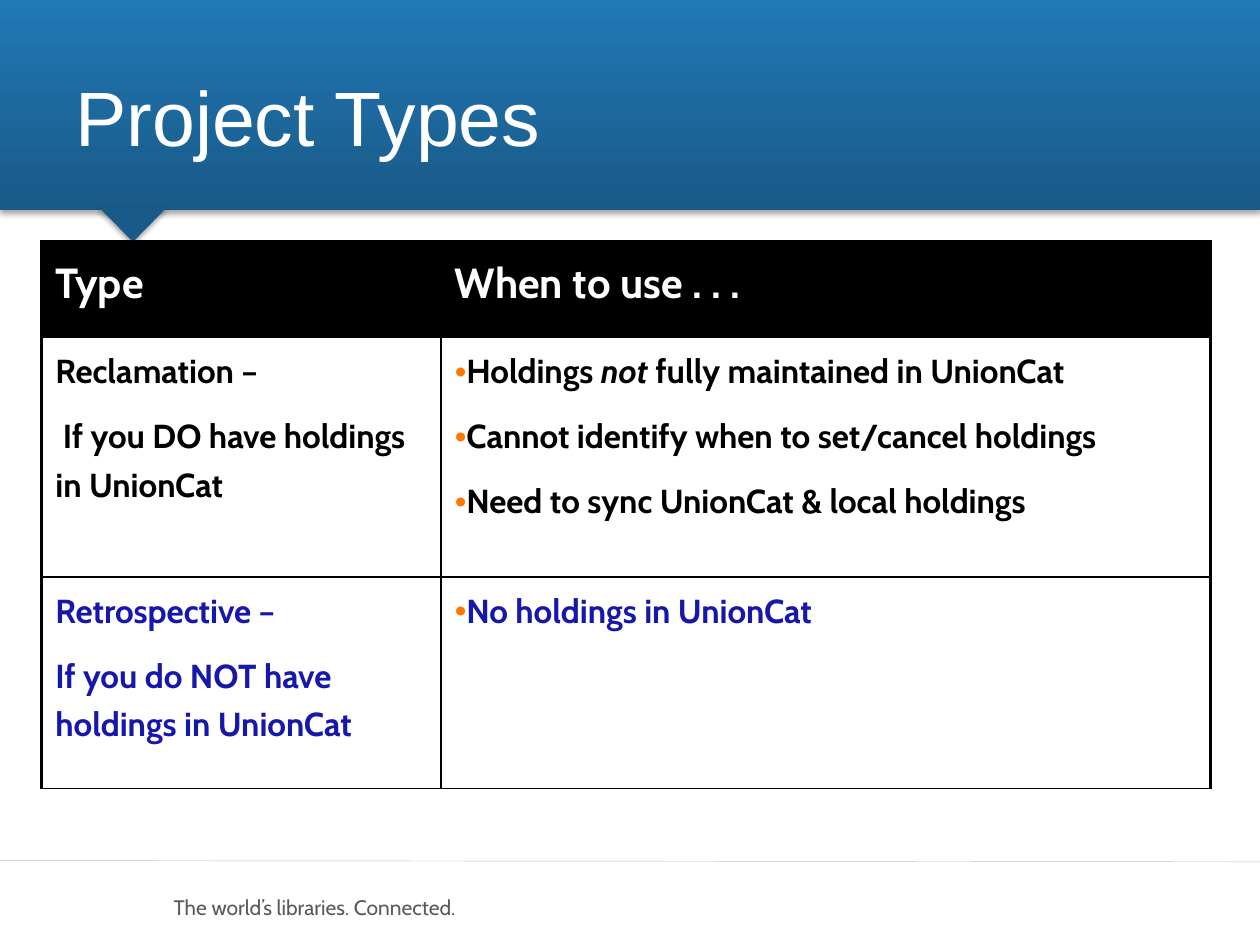
from lxml.etree import SubElement
from pptx import Presentation
from pptx.dml.color import RGBColor
from pptx.enum.shapes import MSO_CONNECTOR, MSO_SHAPE
from pptx.enum.text import MSO_ANCHOR
from pptx.oxml import parse_xml
from pptx.oxml.ns import nsdecls, qn
from pptx.util import Inches, Pt

TITLE = "Project Types"
FOOTER = "The world’s libraries. Connected."
HEADER = ["Type", "When to use . . ."]
# Each cell is a list of paragraphs, each paragraph a list of (text, italic) runs.
BODY = [
    [
        [[("Reclamation –", False)],
         [("If you DO have holdings in UnionCat", False)]],
        [[("Holdings ", False), ("not", True),
          (" fully maintained in UnionCat", False)],
         [("Cannot identify when to set/cancel holdings", False)],
         [("Need to sync UnionCat & local holdings", False)]],
    ],
    [
        [[("Retrospective –", False)],
         [("If you do NOT have holdings in UnionCat", False)]],
        [[("No holdings in UnionCat", False)]],
    ],
]
COL_WIDTHS = [3.17, 6.11]
ROW_HEIGHTS = [0.76, 1.9, 1.68]
FIRST_LINE_INDENTS = {(1, 0, 1): 0.06}  # (row, column, paragraph): inches

THEME = {
    "title": {"name": "Arial", "size": Pt(44), "color": "FFFFFF"},
    "footer": {"name": "Cabin", "size": Pt(12), "color": "595959"},
    "rows": [
        {"name": "Cabin", "size": Pt(24), "bold": True, "color": "FFFFFF"},
        {"name": "Cabin", "size": Pt(19), "bold": True, "color": "000000"},
        {"name": "Cabin", "size": Pt(19), "bold": True, "color": "1717AB"},
    ],
    "band_top": "2178B5", "band_bottom": "195A88",
    "rule": "BFBFBF", "border": "000000", "bullet": "FF7600",
    "thick": 2.25, "thin": 1,
}


def rgb(value):
    return RGBColor.from_string(value)


def add_run(p, text, style, italic=False):
    r = p.add_run()
    r.text = text
    for name, value in style.items():
        if name == "color":
            r.font.color.rgb = rgb(value)
        else:
            setattr(r.font, name, value)
    if italic:
        r.font.italic = True


def add_text(s, text, box, style):
    tf = s.shapes.add_textbox(*map(Inches, box)).text_frame
    tf.word_wrap = True
    tf.vertical_anchor = MSO_ANCHOR.MIDDLE
    add_run(tf.paragraphs[0], text, style)
    return tf


def add_band_shape(s, kind, box):
    sp = s.shapes.add_shape(kind, *map(Inches, box))
    sp.line.fill.background()
    return sp


def add_shadow(sp):
    sp._element.spPr.append(parse_xml(
        f'<a:effectLst {nsdecls("a")}><a:outerShdw blurRad="{Pt(3.1)}" '
        f'dist="{Pt(1.8)}" dir="5400000" rotWithShape="0">'
        '<a:srgbClr val="000000"><a:alpha val="35000"/></a:srgbClr>'
        '</a:outerShdw></a:effectLst>'))


def add_banner(s):
    bar = add_band_shape(s, MSO_SHAPE.ROUNDED_RECTANGLE, (0, 0, 10, 1.67))
    bar.adjustments[0] = 0
    bar.fill.gradient()
    bar.fill.gradient_angle = 270
    for stop, key in zip(bar.fill.gradient_stops, ("band_top", "band_bottom")):
        stop.color.rgb = rgb(THEME[key])
    pointer = add_band_shape(s, MSO_SHAPE.ISOSCELES_TRIANGLE,
                             (0.78, 1.64, 0.55, 0.28))
    pointer.rotation = 180
    pointer.fill.solid()
    pointer.fill.fore_color.rgb = rgb(THEME["band_bottom"])
    for sp in (bar, pointer):
        add_shadow(sp)


def add_footer(s):
    rule = s.shapes.add_connector(MSO_CONNECTOR.STRAIGHT, Inches(0),
                                  Inches(6.83), Inches(10), Inches(6.84))
    rule.line.color.rgb = rgb(THEME["rule"])
    rule.line.width = Pt(0.25)
    SubElement(rule._element.spPr, qn("a:effectLst"))
    tf = add_text(s, FOOTER, (1.28, 7.03, 2.81, 0.3), THEME["footer"])
    tf.paragraphs[0].line_spacing = 1.2


def set_borders(cell, widths):
    """Draw cell sides; widths maps L, R, T and B to points."""
    tc_pr = cell._tc.get_or_add_tcPr()
    for i, (side, width) in enumerate(widths.items()):
        tc_pr.insert(i, parse_xml(
            f'<a:ln{side} {nsdecls("a")} w="{Pt(width)}"><a:solidFill>'
            f'<a:srgbClr val="{THEME["border"]}"/></a:solidFill></a:ln{side}>'))


def format_paragraph(p, indent, bullet):
    p_pr = p._p.get_or_add_pPr()
    p_pr.set("marL", str(Inches(0.01)))
    p_pr.set("indent", str(Inches(indent)))
    if bullet:
        color = SubElement(p_pr, qn("a:buClr"))
        SubElement(color, qn("a:srgbClr"), val=THEME["bullet"])
        SubElement(p_pr, qn("a:buFont"), typeface="Arial")
        SubElement(p_pr, qn("a:buChar"), char="•")
    p.line_spacing = 1.2


def fill_cell(cell, row, col, paragraphs):
    style = THEME["rows"][row]
    tf = cell.text_frame
    for i, runs in enumerate(paragraphs):
        p = tf.add_paragraph() if i else tf.paragraphs[0]
        format_paragraph(p, FIRST_LINE_INDENTS.get((row, col, i), 0),
                         bullet=row > 0 and col == 1)
        if i:
            p.space_before = style["size"] // 2
        for text, italic in runs:
            add_run(p, text, style, italic)


def add_types_table(s):
    rows = [[[[(text, False)]] for text in HEADER]] + BODY
    table = s.shapes.add_table(
        len(rows), len(COL_WIDTHS), Inches(0.33), Inches(1.92),
        Inches(sum(COL_WIDTHS)), Inches(sum(ROW_HEIGHTS))).table
    table.first_row = table.horz_banding = False
    for column, width in zip(table.columns, COL_WIDTHS):
        column.width = Inches(width)
    for table_row, height in zip(table.rows, ROW_HEIGHTS):
        table_row.height = Inches(height)

    thick, thin = THEME["thick"], THEME["thin"]
    for row, cells in enumerate(rows):
        for col, paragraphs in enumerate(cells):
            cell = table.cell(row, col)
            fill_cell(cell, row, col, paragraphs)
            if row == 0:
                cell.fill.solid()
                cell.fill.fore_color.rgb = rgb(THEME["border"])
            else:
                cell.fill.background()
            set_borders(cell, {
                "L": thick if col == 0 else thin,
                "R": thick if col == len(cells) - 1 else thin,
                "T": thick if row == 0 else thin,
                "B": thin,
            })


def main():
    prs = Presentation()
    prs.slide_width, prs.slide_height = Inches(10), Inches(7.5)
    s = prs.slides.add_slide(prs.slide_layouts[6])
    add_footer(s)
    add_banner(s)
    add_types_table(s)
    add_text(s, TITLE, (0.5, 0.42, 9, 1), THEME["title"])
    prs.save("out.pptx")


if __name__ == "__main__":
    main()
